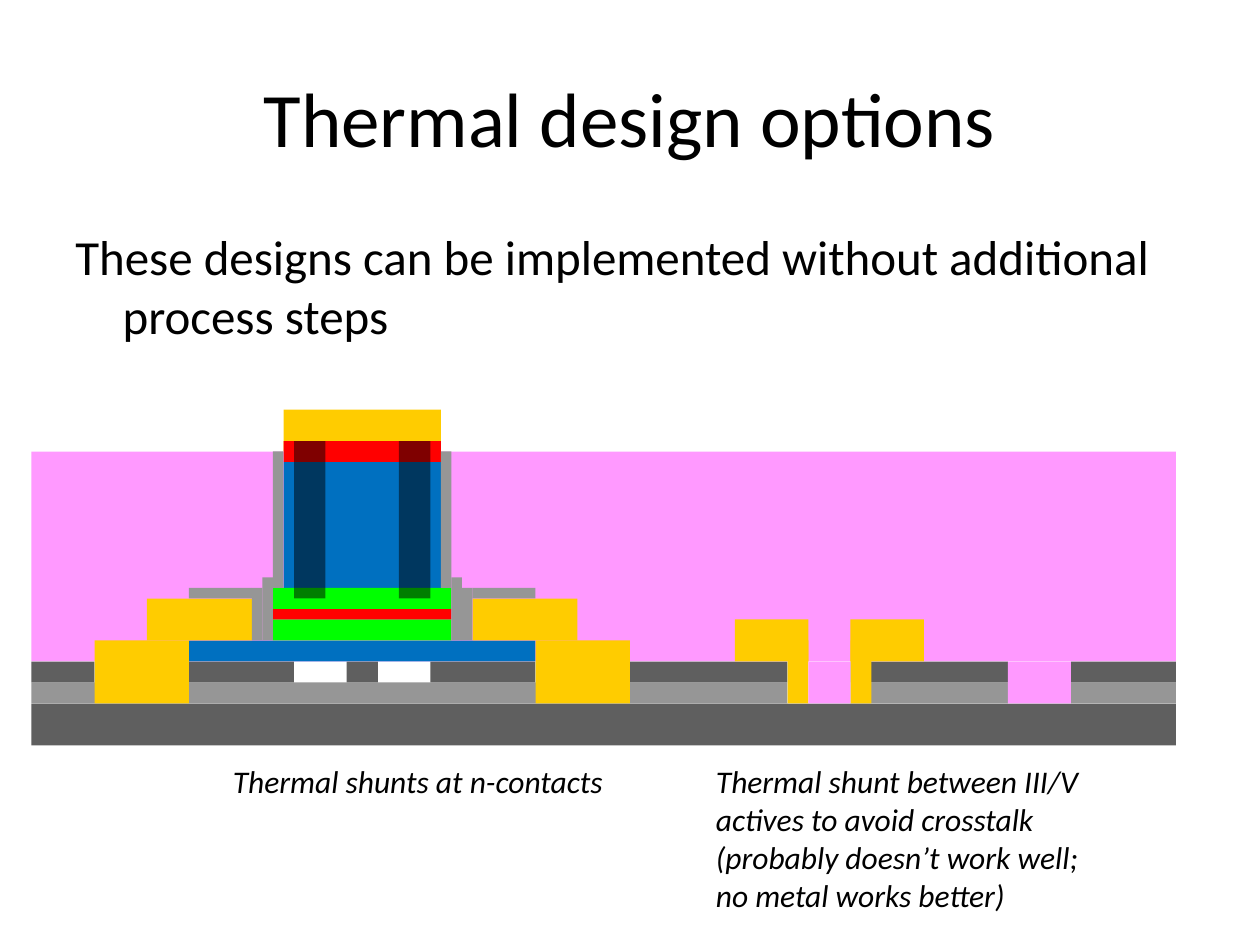
from pptx import Presentation
from pptx.dml.color import RGBColor
from pptx.enum.shapes import MSO_SHAPE
from pptx.enum.text import MSO_ANCHOR, PP_ALIGN
from pptx.oxml.ns import qn
from pptx.util import Pt
from lxml.etree import SubElement

PX = 9525  # 96 px to the inch
CELL = 8  # px in one step of the drawing grid
AXIS = 69  # twice the laser's centre line, in cells

GOLD, PINK, GREY, DARK = "FFCC00", "FF99FF", "969696", "5F5F5F"
BLUE, RED, GREEN, BLACK = "0070C0", "FF0000", "00FF00", "000000"


def color(code):
    return RGBColor.from_string(code)


class Deck:
    font = "Calibri"

    def __init__(self, width, height):
        self.prs = Presentation()
        self.prs.slide_width = width * PX
        self.prs.slide_height = height * PX
        self.slide = self.prs.slides.add_slide(self.prs.slide_layouts[6])

    def text(self, box, lines, size, italic=False, align=PP_ALIGN.LEFT,
             anchor=MSO_ANCHOR.TOP, hang=0, before=0):
        """Add a text box; hang is the hanging indent in px."""
        shape = self.slide.shapes.add_textbox(*(n * PX for n in box))
        frame = shape.text_frame
        frame.word_wrap = True
        frame.vertical_anchor = anchor
        frame.text = "\n".join(lines)
        for para in frame.paragraphs:
            para.alignment = align
            para.space_before = Pt(before)
            font = para.font
            font.name, font.size, font.italic = self.font, Pt(size), italic
            font.color.rgb = color(BLACK)
            if hang:
                props = para._p.get_or_add_pPr()
                props.set("marL", str(hang * PX))
                props.set("indent", str(-hang * PX))

    def block(self, fill, left, top, width, height, alpha=100):
        """Add a plain rectangle, placed in grid cells."""
        box = (n * CELL * PX for n in (left, top, width, height))
        shape = self.slide.shapes.add_shape(MSO_SHAPE.RECTANGLE, *box)
        shape.shadow.inherit = False
        shape.line.fill.background()
        shape.fill.solid()
        shape.fill.fore_color.rgb = color(fill)
        if alpha < 100:
            tone = shape._element.spPr.find(qn("a:solidFill"))[0]
            SubElement(tone, qn("a:alpha"), val=str(alpha * 1000))

    def pair(self, fill, left, top, width, height, alpha=100):
        """Add a block and its mirror across the laser's axis."""
        for x in (left, AXIS - left - width):
            self.block(fill, x, top, width, height, alpha)


def main():
    deck = Deck(960, 720)
    deck.text((48, 29, 864, 120), ["Thermal design options"], 44,
              align=PP_ALIGN.CENTER, anchor=MSO_ANCHOR.MIDDLE)
    deck.text((48, 168, 864, 475),
              ["These designs can be implemented without additional process steps"],
              28, hang=36, before=5.6)
    deck.text((168, 576, 336, 38), ["Thermal shunts at n-contacts"], 18, True)
    deck.text((536, 576, 304, 126),
              ["Thermal shunt between III/V actives to avoid crosstalk",
               "(probably doesn’t work well; no metal works better)"], 18, True)

    # Wafer, cladding and laser layers: fill, left, top, width, height
    layers = [
        (GOLD, 27, 39, 15, 4),
        (PINK, 3, 43, 109, 20),
        (GREY, 3, 65, 72, 2),
        (DARK, 3, 67, 109, 4),
        (BLUE, 27, 44, 15, 14),
        (BLUE, 18, 61, 33, 2),
        (RED, 27, 42, 15, 2),
        (GREEN, 26, 59, 17, 2),
        (RED, 26, 58, 17, 1),
        (GREEN, 26, 56, 17, 2),
    ]
    for layer in layers:
        deck.block(*layer)

    # Contacts, side walls and shunts on both sides of the laser
    sides = [
        (GOLD, 14, 57, 10, 4),
        (GREY, 25, 55, 1, 6),
        (GREY, 24, 56, 1, 5),
        (GREY, 18, 56, 6, 1),
        (GREY, 26, 43, 1, 13),
        (BLACK, 28, 42, 3, 15, 50),
        (DARK, 18, 63, 10, 2),
        (GOLD, 9, 61, 9, 6),
    ]
    for side in sides:
        deck.pair(*side)

    # Silicon: waveguide core and the areas beside the shunts
    for left, width in ((33, 3), (3, 6), (60, 15)):
        deck.block(DARK, left, 63, width, 2)
    for left, width in ((81, 15), (102, 10)):
        deck.block(GREY, left, 65, width, 2)
        deck.block(DARK, left, 63, width, 2)

    # Shunt between actives, and the trenches
    for stem, cap in ((75, 70), (81, 81)):
        deck.block(GOLD, stem, 61, 2, 6)
        deck.block(GOLD, cap, 59, 7, 4)
    for left, width in ((77, 4), (96, 6)):
        deck.block(PINK, left, 63, width, 4)

    deck.prs.save("out.pptx")


if __name__ == "__main__":
    main()
